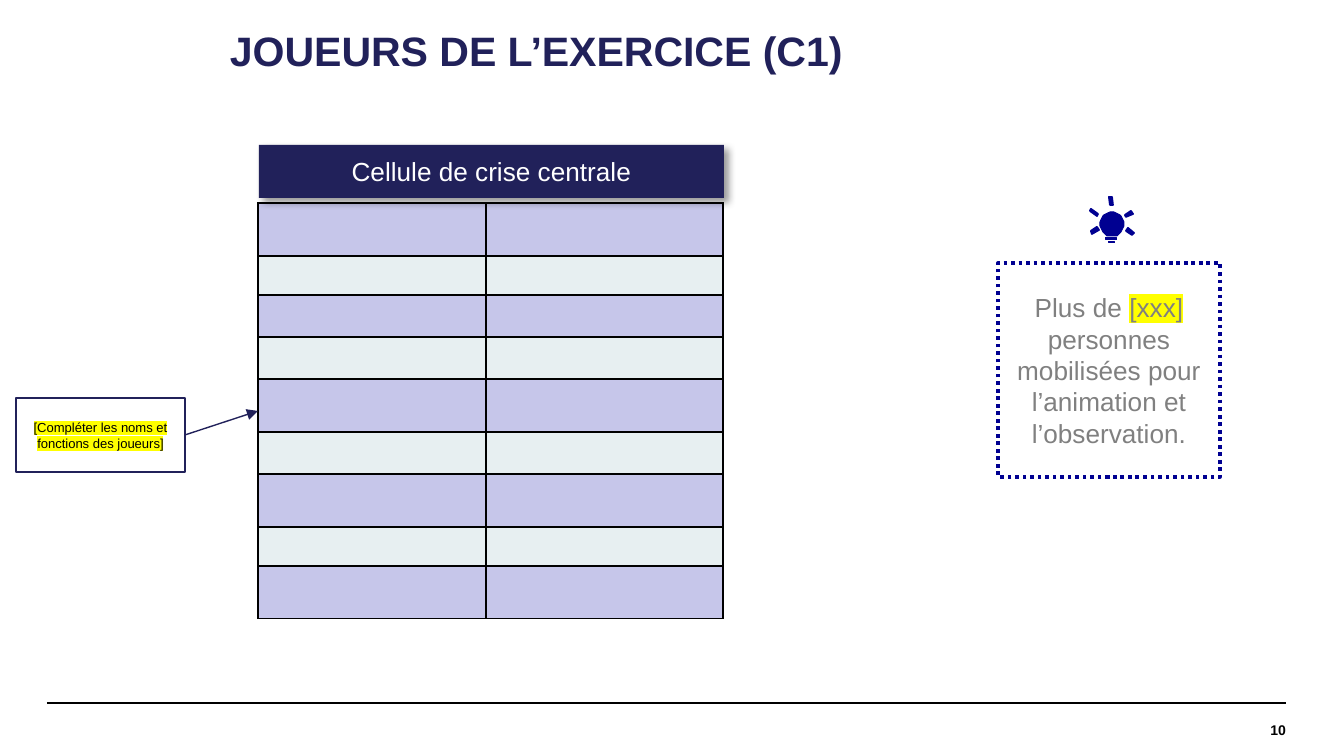
import math

import pptx
import pptx.chart.data
import pptx.dml.color
import pptx.enum.dml
import pptx.enum.shapes
import pptx.enum.text
import pptx.oxml
import pptx.oxml.ns
import pptx.util
from lxml import etree

RGB = pptx.dml.color.RGBColor
NAVY = RGB(0x21, 0x21, 0x5A)
BLUE = RGB(0x00, 0x00, 0x91)
LILAC = RGB(0xC6, 0xC6, 0xEA)
PALE = RGB(0xE7, 0xEF, 0xF1)
GREY = RGB(0x80, 0x80, 0x80)
BLACK = RGB(0, 0, 0)
WHITE = RGB(0xFF, 0xFF, 0xFF)
YELLOW = RGB(0xFF, 0xFF, 0)
SCALE = 914400 / 134.4
ALIGN = pptx.enum.text.PP_ALIGN
RECT = pptx.enum.shapes.MSO_SHAPE.RECTANGLE
DOTS = pptx.enum.dml.MSO_LINE.ROUND_DOT


def px(*sizes):
    """Turn pixel lengths into EMU."""
    return [pptx.util.Emu(round(size * SCALE)) for size in sizes]


def sub(node, tag, **attrs):
    """Append a drawing element to an XML node."""
    child = etree.SubElement(node, pptx.oxml.ns.qn(tag))
    for key, value in attrs.items():
        child.set(key, str(value))
    return child


def write(shape, *parts, size, color, bold=False, align=ALIGN.CENTER, inset=(13, 7), lead=None):
    """Write runs in a shape; a part given as a tuple is highlighted."""
    frame = shape.text_frame
    frame.word_wrap = True
    frame.auto_size = pptx.enum.text.MSO_AUTO_SIZE.NONE
    frame.vertical_anchor = pptx.enum.text.MSO_ANCHOR.MIDDLE
    side, edge = px(*inset)
    frame.margin_left = frame.margin_right = side
    frame.margin_top = frame.margin_bottom = edge
    para = frame.paragraphs[0]
    para.alignment = align
    if lead:
        para.line_spacing = lead
    for part in parts:
        marked = isinstance(part, tuple)
        run = para.add_run()
        run.text = part[0] if marked else part
        font = run.font
        font.name, font.size, font.bold = "Arial", pptx.util.Pt(size), bold
        font.color.rgb = color
        if marked:
            props = run._r.get_or_add_rPr()
            mark = sub(props, "a:highlight")
            sub(mark, "a:srgbClr", val=YELLOW)
            props.find(pptx.oxml.ns.qn("a:solidFill")).addnext(mark)


def paint(shape, fill=None, line=None, width=1, dash=None):
    """Set the fill and outline of a shape."""
    shape.shadow.inherit = False
    if fill is None:
        shape.fill.background()
    else:
        shape.fill.solid()
        shape.fill.fore_color.rgb = fill
    if line is None:
        shape.line.fill.background()
    else:
        shape.line.color.rgb = line
        shape.line.width = pptx.util.Pt(width)
        if dash:
            shape.line.dash_style = dash


def box(slide, area, **look):
    """Add a painted rectangle."""
    shape = slide.shapes.add_shape(RECT, *px(*area))
    paint(shape, **look)
    return shape


def shade(shape):
    """Give a shape a soft shadow to the lower right."""
    effects = shape._element.spPr.find(pptx.oxml.ns.qn("a:effectLst"))
    outer = sub(effects, "a:outerShdw", blurRad=50800, dist=38100, dir=2700000, algn="tl", rotWithShape=0)
    tint = sub(outer, "a:srgbClr", val=BLACK)
    sub(tint, "a:alpha", val=40000)


def link(slide, start, end, color, width, arrow=False):
    """Add a straight line, with an arrowhead if asked."""
    kind = pptx.enum.shapes.MSO_CONNECTOR.STRAIGHT
    line = slide.shapes.add_connector(kind, *px(*start, *end))
    line.line.color.rgb = color
    line.line.width = pptx.util.Pt(width)
    if arrow:
        sub(line.line._get_or_add_ln(), "a:tailEnd", type="triangle")
    sub(line._element.spPr, "a:effectLst")


def grid(slide, left, top, cols, rows):
    """Add an empty table with banded rows and black borders."""
    table = slide.shapes.add_table(len(rows), len(cols), *px(left, top, sum(cols), sum(rows))).table
    for col, width in zip(table.columns, px(*cols)):
        col.width = width
    for i, (row, height) in enumerate(zip(table.rows, px(*rows))):
        row.height = height
        for cell in row.cells:
            props = cell._tc.get_or_add_tcPr()
            for side in ("L", "R", "T", "B"):
                edge = sub(props, f"a:ln{side}", w=12700)
                sub(sub(edge, "a:solidFill"), "a:srgbClr", val=BLACK)
            cell.fill.solid()
            cell.fill.fore_color.rgb = PALE if i % 2 else LILAC
            sub(cell.text_frame.paragraphs[0]._p, "a:endParaRPr", sz=800)


def outline(slide, loops, width):
    """Add a blue freeform made of closed loops."""
    pen = None
    for first, *rest in loops:
        if pen is None:
            pen = slide.shapes.build_freeform(*first, scale=SCALE)
        else:
            pen.move_to(*first)
        pen.add_line_segments(rest, close=True)
    paint(pen.convert_to_shape(), fill=BLUE, line=BLUE, width=width)


def bulb(slide):
    """Draw a light bulb with five rays."""
    turns = [math.radians(angle) for angle in range(140, 401, 10)]
    globe = [(1112 + 12 * math.cos(turn), 224 + 12 * math.sin(turn)) for turn in turns]
    globe += [(1117, 236), (1107, 236)]
    ring = [(1106, 238), (1117, 238), (1117, 240), (1106, 240)]
    cap = [(1109, 242), (1115, 242), (1115, 243), (1109, 243)]
    outline(slide, [globe, ring, cap], 0.5)
    rays = [
        [(1128, 228), (1134, 233), (1132, 235), (1126, 231)],
        [(1097, 227), (1099, 230), (1092, 234), (1091, 231)],
        [(1131, 211), (1133, 214), (1126, 217), (1125, 215)],
        [(1091, 209), (1098, 214), (1097, 216), (1090, 211)],
        [(1109, 197), (1112, 197), (1113, 205), (1110, 205)],
    ]
    outline(slide, rays, 1)


def main():
    """Build the slide and save it."""
    deck = pptx.Presentation()
    deck.slide_width, deck.slide_height = px(1344, 756)
    slide = deck.slides.add_slide(deck.slide_layouts[5])
    link(slide, (47, 703), (1286, 703), BLACK, 0.8)

    title = slide.shapes.title
    title.left, title.top, title.width, title.height = px(214, 8, 917, 90)
    write(title, "JOUEURS DE L’EXERCICE (C1)", size=22, color=NAVY, bold=True,
          align=ALIGN.LEFT, inset=(16, 7), lead=0.9)

    grid(slide, 258, 203, [228, 237], [53, 39, 42, 42, 53, 42, 53, 39, 53])
    head = box(slide, (259, 145, 465, 53), fill=NAVY)
    shade(head)
    write(head, "Cellule de crise centrale", size=14, color=WHITE)

    note = box(slide, (998, 263, 222, 214), fill=WHITE, line=BLUE, width=2, dash=DOTS)
    write(note, "Plus de ", ("[xxx] ",), "personnes mobilisées pour l’animation et l’observation.",
          size=14, color=GREY)
    bulb(slide)

    hint = box(slide, (16, 398, 169, 74), line=NAVY, width=0.75)
    write(hint, ("[Compléter les noms et fonctions des joueurs]",), size=7, color=BLACK)
    link(slide, (185, 435), (258, 411), NAVY, 0.75, arrow=True)

    page = slide.shapes.add_textbox(*px(1087, 703, 199, 53))
    write(page, "10", size=7.5, color=BLACK, bold=True, align=ALIGN.RIGHT, inset=(0, 0))
    deck.save("out.pptx")


if __name__ == "__main__":
    main()
